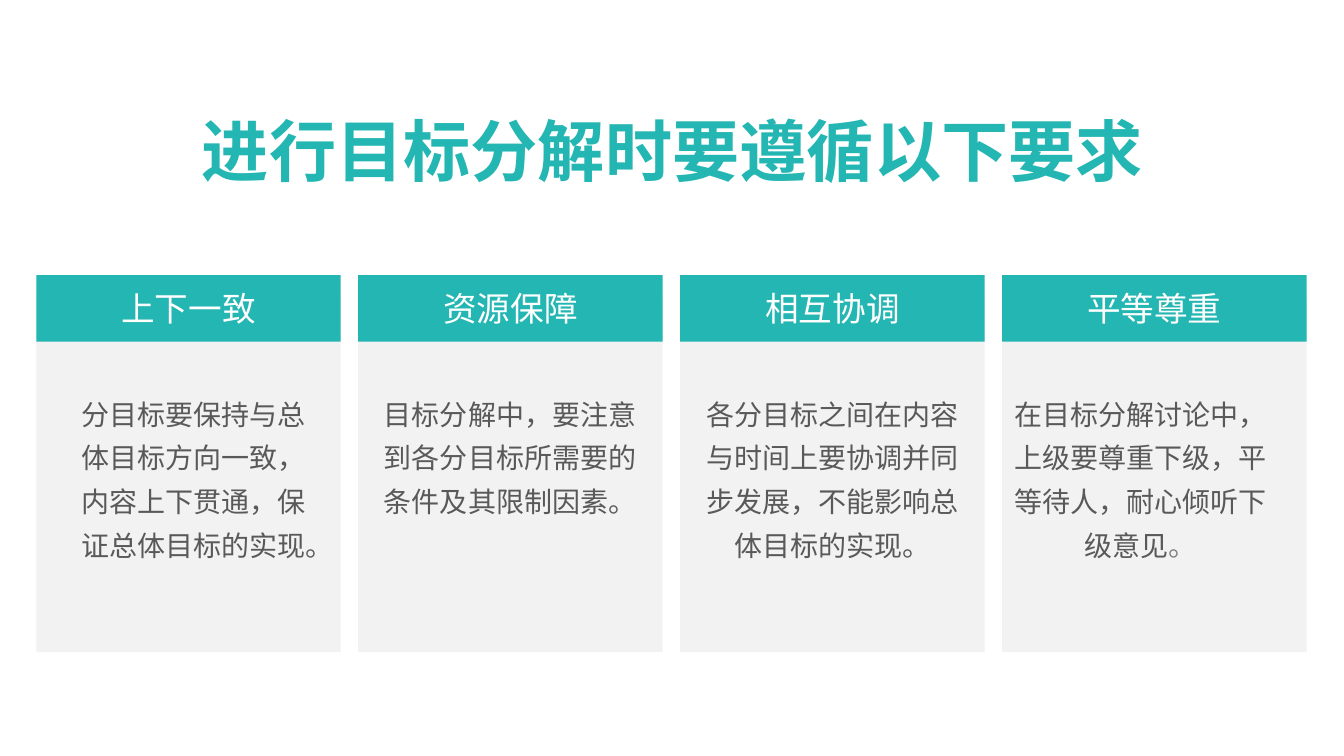
from lxml import etree
from pptx import Presentation
from pptx.dml.color import RGBColor
from pptx.enum import shapes, text
from pptx.oxml import ns
from pptx.util import Inches, Pt

TEAL = RGBColor(0x23, 0xB6, 0xB2)
PALE = RGBColor(0xF2, 0xF2, 0xF2)
WHITE = RGBColor(0xFF, 0xFF, 0xFF)
DARK = RGBColor(0x59, 0x59, 0x59)
GREY = RGBColor(0x80, 0x80, 0x80)
SANS = "Noto Sans CJK SC"

TITLE = "进行目标分解时要遵循以下要求"
# heading, body runs, body left, body width, body height
CARDS = [
    ("上下一致", [("分目标要保持与总体目标方向一致，内容上下贯通，保证总体目标的实现。", DARK)],
     0.7, 2.44, 1.85),
    ("资源保障", [("目标分解中，要注意到各分目标所需要的条件及其限制因素。", DARK)],
     3.69, 2.74, 1.41),
    ("相互协调", [("各分目标之间在内容与时间上要协调并同步发展，不能影响总体目标的实现。", DARK)],
     6.88, 2.75, 1.85),
    ("平等尊重", [("在目标分解讨论中，上级要尊重下级，平等待人，耐心倾听下级意见", DARK), ("。", GREY)],
     9.88, 2.87, 1.85),
]
LEFT, STEP, WIDTH = 0.36, 3.193, 3.02


def write(shape, runs, size, font=SANS, bold=False, space=1.0,
          anchor=text.MSO_ANCHOR.MIDDLE, fit=text.MSO_AUTO_SIZE.NONE):
    """Fill a shape with one centred paragraph of (text, colour) runs."""
    frame = shape.text_frame
    frame.word_wrap = True
    frame.auto_size = fit
    frame.vertical_anchor = anchor
    para = frame.paragraphs[0]
    para.alignment = text.PP_ALIGN.CENTER
    para.line_spacing = space
    for words, color in runs:
        run = para.add_run()
        run.text = words
        run.font.size = Pt(size)
        run.font.bold = bold
        run.font.name = font
        run.font.color.rgb = color
        east = etree.SubElement(run.font._element, ns.qn("a:ea"))
        east.set("typeface", font)


def block(slide, left, top, height, color):
    """Draw a plain filled rectangle of card width."""
    box = slide.shapes.add_shape(shapes.MSO_SHAPE.RECTANGLE, Inches(left),
                                 Inches(top), Inches(WIDTH), Inches(height))
    box.shadow.inherit = False
    box.fill.solid()
    box.fill.fore_color.rgb = color
    box.line.fill.background()
    return box


def main():
    """Build the slide and save it."""
    deck = Presentation()
    deck.slide_width, deck.slide_height = Inches(13.33), Inches(7.5)
    slide = deck.slides.add_slide(deck.slide_layouts[5])
    title = slide.shapes.title
    title.left, title.top = Inches(1.45), Inches(1.03)
    title.width, title.height = Inches(10.44), Inches(0.91)
    write(title, [(TITLE, TEAL)], 48, font="Arial", bold=True)

    for col, (head, body, left, width, height) in enumerate(CARDS):
        edge = LEFT + col * STEP
        block(slide, edge, 2.96, 3.51, PALE)
        write(block(slide, edge, 2.73, 0.66, TEAL), [(head, WHITE)], 24)
        note = slide.shapes.add_textbox(Inches(left), Inches(3.79),
                                        Inches(width), Inches(height))
        write(note, body, 20, space=1.3, anchor=text.MSO_ANCHOR.TOP,
              fit=text.MSO_AUTO_SIZE.SHAPE_TO_FIT_TEXT)

    deck.save("out.pptx")


if __name__ == "__main__":
    main()
